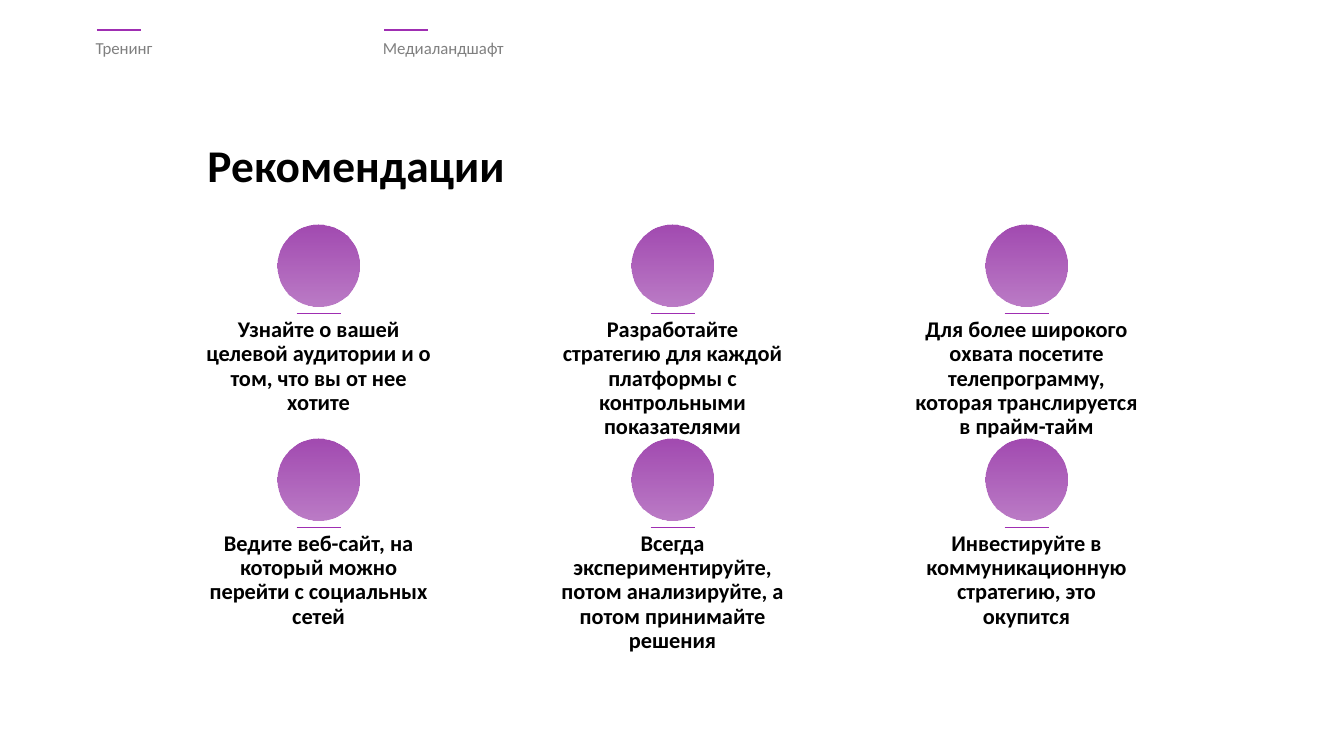
from lxml import etree
from pptx import Presentation
from pptx.dml.color import RGBColor
from pptx.enum.shapes import MSO_CONNECTOR, MSO_SHAPE
from pptx.enum.text import MSO_ANCHOR, PP_ALIGN
from pptx.oxml.ns import qn
from pptx.util import Cm, Pt

STRAIGHT = MSO_CONNECTOR.STRAIGHT
OVAL = MSO_SHAPE.OVAL
TOP, MIDDLE = MSO_ANCHOR.TOP, MSO_ANCHOR.MIDDLE
LEFT, CENTER, JUSTIFY = PP_ALIGN.LEFT, PP_ALIGN.CENTER, PP_ALIGN.JUSTIFY

BLACK = RGBColor(0x00, 0x00, 0x00)
GRAY = RGBColor(0x80, 0x80, 0x80)
PURPLE = RGBColor(0x9F, 0x2E, 0xB2)
LILAC = RGBColor(0xA2, 0x4A, 0xB1)

HEADING = "Рекомендации"
SECTIONS = ["Тренинг", "Медиаландшафт"]
RECOMMENDATIONS = [
    "Узнайте о вашей целевой аудитории и о том, что вы от нее хотите",
    "Разработайте стратегию для каждой платформы с контрольными показателями",
    "Для более широкого охвата посетите телепрограмму, которая транслируется в прайм-тайм",
    "Ведите веб-сайт, на который можно перейти с социальных сетей",
    "Всегда экспериментируйте, потом анализируйте, а потом принимайте решения",
    "Инвестируйте в коммуникационную стратегию, это окупится",
]

HEADING_FONT = {"name": "Calibri", "size": Pt(32.4), "bold": True}
SECTION_FONT = {"name": "Calibri", "size": Pt(12), "bold": False}
ADVICE_FONT = {"name": "Calibri", "size": Pt(16), "bold": True}

COLUMNS = 3
FIRST_CENTER, COLUMN_STEP = 8.03, 8.92
FIRST_ROW, ROW_STEP = 7.9, 5.39
CIRCLE, CIRCLE_RISE = 2.06, 2.24
RULE_LENGTH = 1.11
ADVICE_WIDTH, ADVICE_HEIGHT = 6.2, 0.66
SECTION_LEFT, SECTION_STEP = 2.16, 7.24


def add_text(slide, text, box, font, color, align, anchor=TOP):
    frame = slide.shapes.add_textbox(*map(Cm, box)).text_frame
    frame.word_wrap = True
    frame.vertical_anchor = anchor
    paragraph = frame.paragraphs[0]
    paragraph.text = text
    paragraph.alignment = align
    paragraph.line_spacing = 0.9
    run_font = paragraph.runs[0].font
    for attribute, value in font.items():
        setattr(run_font, attribute, value)
    run_font.color.rgb = color


def add_rule(slide, left, y):
    rule = slide.shapes.add_connector(
        STRAIGHT, Cm(left), Cm(y), Cm(left + RULE_LENGTH), Cm(y))
    rule.line.color.rgb = PURPLE
    rule.line.width = Pt(1.25)
    etree.SubElement(rule._element.spPr, qn("a:effectLst"))


def add_circle(slide, left, top):
    circle = slide.shapes.add_shape(
        OVAL, Cm(left), Cm(top), Cm(CIRCLE), Cm(CIRCLE))
    circle.shadow.inherit = False
    circle.line.fill.background()
    circle.fill.gradient()
    circle.fill.gradient_angle = 270
    for position, stop in enumerate(circle.fill.gradient_stops):
        stop.position = position
        stop.color.rgb = LILAC
    last_color = list(circle._element.spPr.iter(qn("a:srgbClr")))[-1]
    etree.SubElement(last_color, qn("a:alpha"), val="72000")


def main():
    deck = Presentation()
    deck.slide_width, deck.slide_height = Cm(33.87), Cm(19.05)
    slide = deck.slides.add_slide(deck.slide_layouts[6])

    for index, section in enumerate(SECTIONS):
        left = SECTION_LEFT + index * SECTION_STEP
        add_rule(slide, left + 0.28, 0.76)
        add_text(slide, section, (left, 0.89, 6.43, 1.42),
                 SECTION_FONT, GRAY, JUSTIFY)

    add_text(slide, HEADING, (4.98, 3.45, 12.27, 1.55),
             HEADING_FONT, BLACK, LEFT, MIDDLE)

    for index, advice in enumerate(RECOMMENDATIONS):
        row, column = divmod(index, COLUMNS)
        center = FIRST_CENTER + column * COLUMN_STEP
        y = FIRST_ROW + row * ROW_STEP
        add_circle(slide, center - CIRCLE / 2, y - CIRCLE_RISE)
        add_rule(slide, center - RULE_LENGTH / 2, y)
        add_text(slide, advice,
                 (center - ADVICE_WIDTH / 2, y, ADVICE_WIDTH, ADVICE_HEIGHT),
                 ADVICE_FONT, BLACK, CENTER)

    deck.save("out.pptx")


if __name__ == "__main__":
    main()
